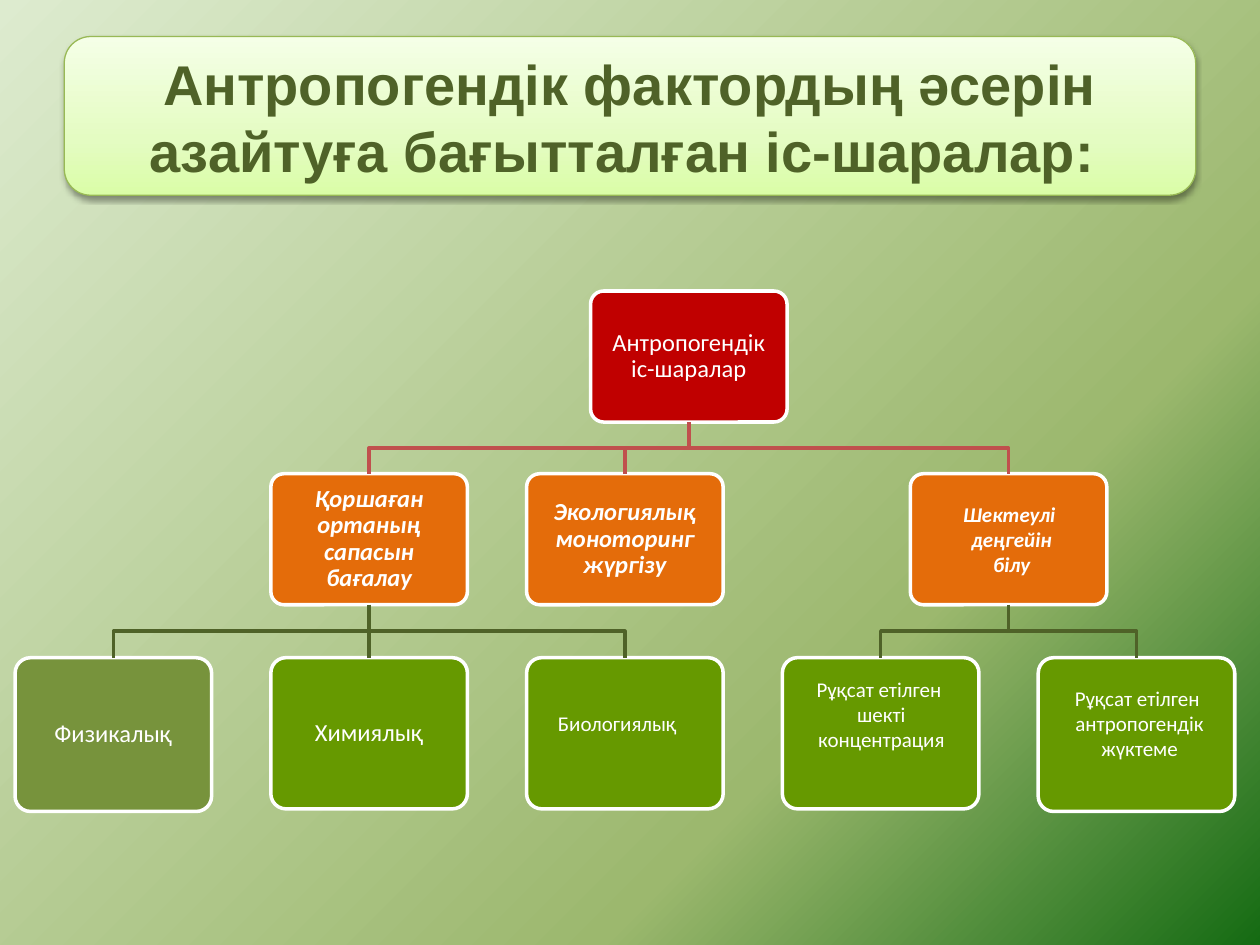
"""Build a slide with a three-level tree of environmental measures."""
from dataclasses import dataclass

from lxml import etree
from pptx import Presentation
from pptx.dml.color import RGBColor
from pptx.enum.shapes import MSO_CONNECTOR, MSO_SHAPE
from pptx.enum.text import MSO_ANCHOR, PP_ALIGN
from pptx.oxml import parse_xml
from pptx.oxml.ns import nsdecls, qn
from pptx.util import Inches, Pt

ROUNDED = MSO_SHAPE.ROUNDED_RECTANGLE
STRAIGHT = MSO_CONNECTOR.STRAIGHT
MIDDLE, TOP = MSO_ANCHOR.MIDDLE, MSO_ANCHOR.TOP
CENTER = PP_ALIGN.CENTER
BOTTOM_SIDE, TOP_SIDE = 2, 0

LEFT, PITCH, BOX_WIDTH = 0.12, 2.03, 1.56
ROOT_TOP, GROUP_TOP, LEAF_TOP = 2.31, 3.76, 5.22
BOX_HEIGHT, LEAF_HEIGHT, TALL_LEAF = 1.04, 1.2, 1.22


@dataclass(frozen=True)
class Theme:
    heading_font: str = "Arial"
    body_font: str = "Calibri"
    heading_size: int = 32
    box_size: int = 14
    note_size: int = 12
    white: str = "FFFFFF"
    dark_green: str = "4F6228"
    red: str = "C00000"
    orange: str = "E46C0A"
    olive: str = "77933C"
    green: str = "669900"
    group_line: str = "C0504D"
    banner_line: str = "98B955"
    page_stops: tuple = ((0, "DDEBCF"), (70, "9CB86E"), (100, "156B13"))
    banner_stops: tuple = ((0, "DAFDA7"), (35, "E4FCC2"), (100, "F5FFE7"))


class SlideBuilder:
    def __init__(self, page, theme):
        self.page = page
        self.theme = theme

    def gradient(self, fill, owner, stops, angle):
        fill.gradient()
        fill.gradient_angle = 360 - angle
        stop_list = next(owner.iter(qn("a:gsLst")))
        for stop in list(stop_list):
            stop_list.remove(stop)
        for position, color in stops:
            stop = etree.SubElement(stop_list, qn("a:gs"), pos=str(position * 1000))
            etree.SubElement(stop, qn("a:srgbClr"), val=color)

    def background(self):
        self.gradient(self.page.background.fill, self.page._element, self.theme.page_stops, 45)

    def outline(self, shape, color, width):
        shape.line.color.rgb = RGBColor.from_string(color)
        shape.line.width = Pt(width)

    def set_text(self, frame, lines, size, color, font, bold=False, italic=False, spacing=1.0):
        for index, line in enumerate(lines):
            para = frame.add_paragraph() if index else frame.paragraphs[0]
            para.text = line
            para.alignment = CENTER
            para.line_spacing = spacing
            para.font.name = font
            para.font.size = Pt(size)
            para.font.bold = bold
            para.font.italic = italic
            para.font.color.rgb = RGBColor.from_string(color)

    def banner(self, left, top, width, height):
        panel = self.page.shapes.add_shape(
            ROUNDED, Inches(left), Inches(top), Inches(width), Inches(height))
        self.gradient(panel.fill, panel._element, self.theme.banner_stops, 270)
        self.outline(panel, self.theme.banner_line, 0.75)
        panel._element.spPr.append(parse_xml(
            f'<a:effectLst {nsdecls("a")}>'
            '<a:outerShdw blurRad="40000" dist="20000" dir="5400000" rotWithShape="0">'
            '<a:srgbClr val="000000"><a:alpha val="38000"/></a:srgbClr>'
            '</a:outerShdw></a:effectLst>'))

    def heading(self, text, left, top, width, height):
        box = self.page.shapes.add_textbox(
            Inches(left), Inches(top), Inches(width), Inches(height))
        box.text_frame.word_wrap = True
        box.text_frame.vertical_anchor = MIDDLE
        self.set_text(box.text_frame, [text], self.theme.heading_size,
                      self.theme.dark_green, self.theme.heading_font, bold=True)

    def box(self, column, top, height, color, text="", strong=False):
        shape = self.page.shapes.add_shape(
            ROUNDED, Inches(LEFT + column * PITCH), Inches(top),
            Inches(BOX_WIDTH), Inches(height))
        shape.shadow.inherit = False
        shape.adjustments[0] = 0.1
        shape.fill.solid()
        shape.fill.fore_color.rgb = RGBColor.from_string(color)
        self.outline(shape, self.theme.white, 2)
        if text:
            frame = shape.text_frame
            frame.word_wrap = True
            frame.vertical_anchor = MIDDLE
            frame.margin_left = frame.margin_right = Inches(0.09)
            frame.margin_top = frame.margin_bottom = Inches(0.09)
            self.set_text(frame, [text], self.theme.box_size, self.theme.white,
                          self.theme.body_font, strong, strong, 0.9)
        return shape

    def note(self, lines, left, top, width, height, strong=False, wrap=True):
        box = self.page.shapes.add_textbox(
            Inches(left), Inches(top), Inches(width), Inches(height))
        box.text_frame.word_wrap = wrap
        box.text_frame.vertical_anchor = TOP
        self.set_text(box.text_frame, lines, self.theme.note_size, self.theme.white,
                      self.theme.body_font, strong, strong)

    def branch(self, parent, child, color):
        start_x = parent.left + parent.width // 2
        start_y = parent.top + parent.height
        end_x = child.left + child.width // 2
        if start_x == end_x:
            line = self.page.shapes.add_connector(STRAIGHT, start_x, start_y, end_x, child.top)
            line.begin_connect(parent, BOTTOM_SIDE)
            line.end_connect(child, TOP_SIDE)
            etree.SubElement(line._element.spPr, qn("a:effectLst"))
        else:
            bend_y = (start_y + child.top) // 2
            builder = self.page.shapes.build_freeform(start_x, start_y)
            builder.add_line_segments(
                [(start_x, bend_y), (end_x, bend_y), (end_x, child.top)], close=False)
            line = builder.convert_to_shape()
            line.fill.background()
            line.shadow.inherit = False
        self.outline(line, color, 2)


def main():
    deck = Presentation()
    deck.slide_width, deck.slide_height = Inches(10), Inches(7.5)
    theme = Theme()
    slide = SlideBuilder(deck.slides.add_slide(deck.slide_layouts[6]), theme)

    slide.background()
    slide.banner(0.51, 0.29, 8.98, 1.26)
    slide.heading("Антропогендік фактордың әсерін азайтуға бағытталған іс-шаралар: ",
                  0.5, 0.3, 9, 1.25)

    groups = [
        (1, "Қоршаған ортаның сапасын бағалау", [
            (0, "Физикалық", theme.olive, TALL_LEAF),
            (1, "Химиялық", theme.green, LEAF_HEIGHT),
            (2, "", theme.green, LEAF_HEIGHT)]),
        (2, "Экологиялық моноторинг жүргізу", []),
        (3.5, "", [
            (3, "", theme.green, LEAF_HEIGHT),
            (4, "", theme.green, TALL_LEAF)]),
    ]
    root = slide.box(2.25, ROOT_TOP, BOX_HEIGHT, theme.red, "Антропогендік іс-шаралар")
    for column, text, leaves in groups:
        group = slide.box(column, GROUP_TOP, BOX_HEIGHT, theme.orange, text, strong=True)
        slide.branch(root, group, theme.group_line)
        for leaf_column, leaf_text, color, height in leaves:
            leaf = slide.box(leaf_column, LEAF_TOP, height, color, leaf_text)
            slide.branch(group, leaf, theme.dark_green)

    slide.note(["Шектеулі ", "деңгейін білу"], 7.48, 3.93, 1.1, 0.91, strong=True)
    slide.note(["Биологиялық"], 4.32, 5.59, 1.16, 0.3, wrap=False)
    slide.note(["Рұқсат етілген ", "шекті концентрация"], 6.34, 5.32, 1.31, 0.71)
    slide.note(["Рұқсат етілген ", "антропогендік жүктеме"], 8.39, 5.39, 1.31, 0.71)
    deck.save("out.pptx")


if __name__ == "__main__":
    main()
